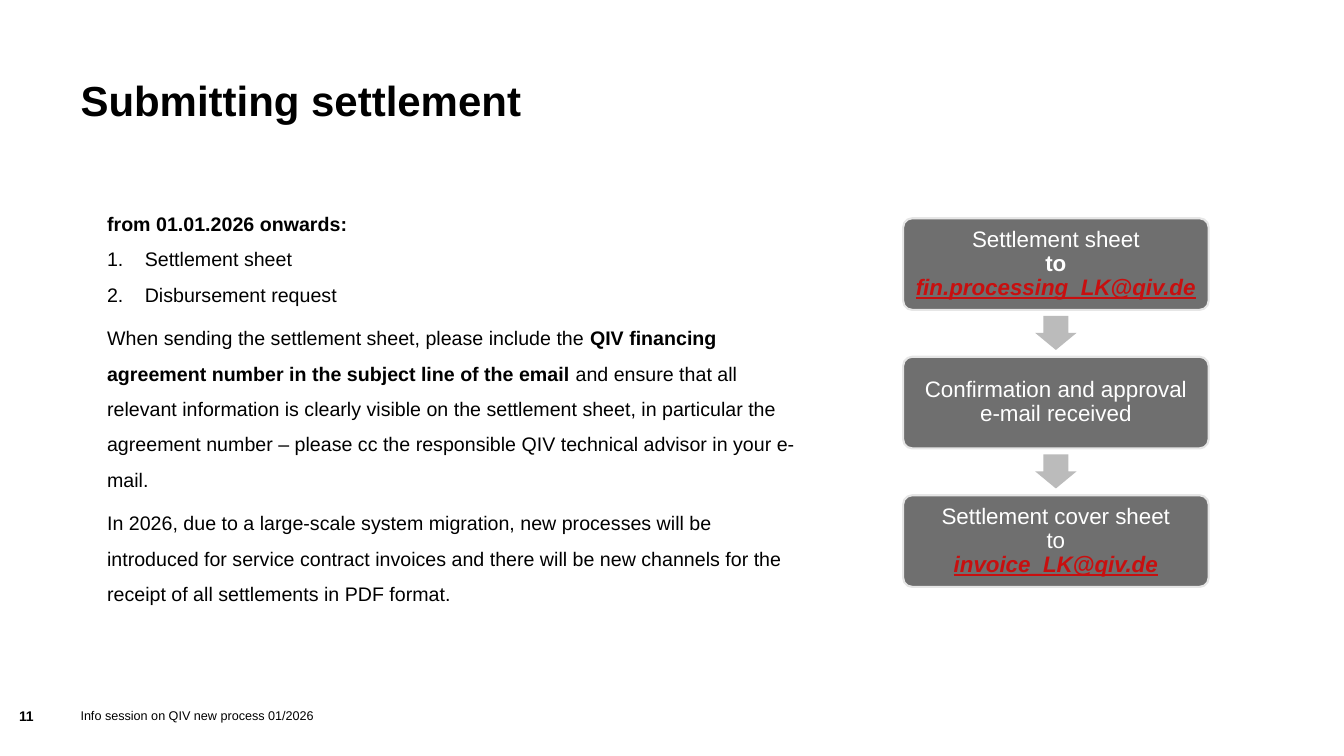
import pptx
import pptx.util
import pptx.dml.color
import pptx.enum.shapes
import pptx.enum.text
import lxml.etree

Cm = pptx.util.Cm
Pt = pptx.util.Pt
RGB = pptx.dml.color.RGBColor
Shape = pptx.enum.shapes.MSO_SHAPE
Align = pptx.enum.text.PP_ALIGN
Anchor = pptx.enum.text.MSO_ANCHOR

BLACK = RGB(0x00, 0x00, 0x00)
WHITE = RGB(0xFF, 0xFF, 0xFF)
GREY = RGB(0x6F, 0x6F, 0x6F)
PALE = RGB(0xE6, 0xE6, 0xE6)
SILVER = RGB(0xBB, 0xBB, 0xBB)
RED = RGB(0xC8, 0x0F, 0x0F)

# Each paragraph: (numbered, space before, [(text, bold), ...])
BODY = [
    (False, 0, [("from 01.01.2026 onwards:", True)]),
    (True, 0, [("Settlement sheet", False)]),
    (True, 0, [("Disbursement request", False)]),
    (False, 6, [
        ("When sending the settlement sheet, please include the ", False),
        ("QIV financing agreement number in the subject line of the email", True),
        (" and ensure that all relevant information is clearly visible on the "
         "settlement sheet, in particular the agreement number – please cc the "
         "responsible QIV technical advisor in your e-mail.", False)]),
    (False, 6, [
        ("In 2026, due to a large-scale system migration, new processes will be "
         "introduced for service contract invoices and there will be new channels "
         "for the receipt of all settlements in PDF format.", False)]),
]

# Each step: lines of (text, style)
STEPS = [
    [("Settlement sheet", "plain"), ("to", "bold"),
     ("fin.processing_LK@qiv.de", "mail")],
    [("Confirmation and approval", "plain"), ("e-mail received", "plain")],
    [("Settlement cover sheet", "plain"), ("to", "plain"),
     ("invoice_LK@qiv.de", "mail")],
]


def set_font(font, size, color, bold=None):
    font.name = "Arial"
    font.size = Pt(size)
    font.color.rgb = color
    font.bold = bold


def set_frame(frame, anchor, inset=0):
    frame.word_wrap = True
    frame.auto_size = pptx.enum.text.MSO_AUTO_SIZE.NONE
    frame.vertical_anchor = anchor
    frame.margin_left = frame.margin_right = Cm(inset)
    frame.margin_top = frame.margin_bottom = Cm(inset)


def add_box(slide, left, top, width, height):
    box = slide.shapes.add_textbox(Cm(left), Cm(top), Cm(width), Cm(height))
    set_frame(box.text_frame, Anchor.MIDDLE)
    return box.text_frame


def add_label(slide, text, left, width, size, bold):
    para = add_box(slide, left, 17.8, width, 0.48).paragraphs[0]
    para.text = text
    set_font(para.font, size, BLACK, bold)


def set_title(slide, text):
    title = slide.shapes.title
    title.left, title.top = Cm(2.03), Cm(2.03)
    title.width, title.height = Cm(29.8), Cm(2.3)
    set_frame(title.text_frame, Anchor.TOP)
    para = title.text_frame.paragraphs[0]
    para.text = text
    para.alignment = Align.LEFT
    para.line_spacing = 0.9
    set_font(para.font, 30, BLACK, True)


def add_number(para):
    props = para._p.get_or_add_pPr()
    props.set("marL", str(Cm(0.95)))
    props.set("indent", str(-Cm(0.95)))
    mark = lxml.etree.SubElement(props, pptx.oxml.ns.qn("a:buAutoNum"))
    mark.set("type", "arabicPeriod")


def add_body(slide):
    frame = add_box(slide, 2.7, 5.05, 17.45, 10.2)
    for index, (listed, before, runs) in enumerate(BODY):
        para = frame.add_paragraph() if index else frame.paragraphs[0]
        para.line_spacing = 1.5
        if before:
            para.space_before = Pt(before)
        if listed:
            add_number(para)
        set_font(para.font, 14, BLACK)
        for text, bold in runs:
            run = para.add_run()
            run.text = text
            run.font.bold = bold


def add_plain(slide, kind, left, top, width, height, fill):
    shape = slide.shapes.add_shape(kind, Cm(left), Cm(top), Cm(width), Cm(height))
    shape.shadow.inherit = False
    shape.fill.solid()
    shape.fill.fore_color.rgb = fill
    return shape


def add_card(slide, top, lines):
    card = add_plain(slide, Shape.ROUNDED_RECTANGLE, 22.76, top, 7.7, 2.31, GREY)
    card.adjustments[0] = 0.1
    card.line.color.rgb = PALE
    card.line.width = Pt(1.5)
    set_frame(card.text_frame, Anchor.MIDDLE, 0.2)
    para = card.text_frame.paragraphs[0]
    para.alignment = Align.CENTER
    para.line_spacing = 0.9
    set_font(para.font, 16, WHITE)
    for index, (text, style) in enumerate(lines):
        if index:
            para.add_line_break()
        run = para.add_run()
        run.text = text
        mail = style == "mail"
        set_font(run.font, 16, RED if mail else WHITE, style != "plain")
        run.font.italic = run.font.underline = mail


def add_arrow(slide, top):
    arrow = add_plain(slide, Shape.DOWN_ARROW, 26.09, top, 1.04, 0.86, SILVER)
    arrow.adjustments[0] = 0.6
    arrow.adjustments[1] = 0.5
    arrow.line.fill.background()


def main():
    deck = pptx.Presentation()
    deck.slide_width, deck.slide_height = Cm(33.87), Cm(19.05)
    slide = deck.slides.add_slide(deck.slide_layouts[5])

    # Title and text
    set_title(slide, "Submitting settlement")
    add_body(slide)

    # Flow of steps
    for index, lines in enumerate(STEPS):
        top = 5.5 + 3.49 * index
        add_card(slide, top, lines)
        if index < len(STEPS) - 1:
            add_arrow(slide, top + 2.46)

    # Footer
    add_label(slide, "11", 0.48, 1.55, 10, True)
    add_label(slide, "Info session on QIV new process 01/2026", 2.03, 27.66, 9, False)

    deck.save("out.pptx")


if __name__ == "__main__":
    main()
